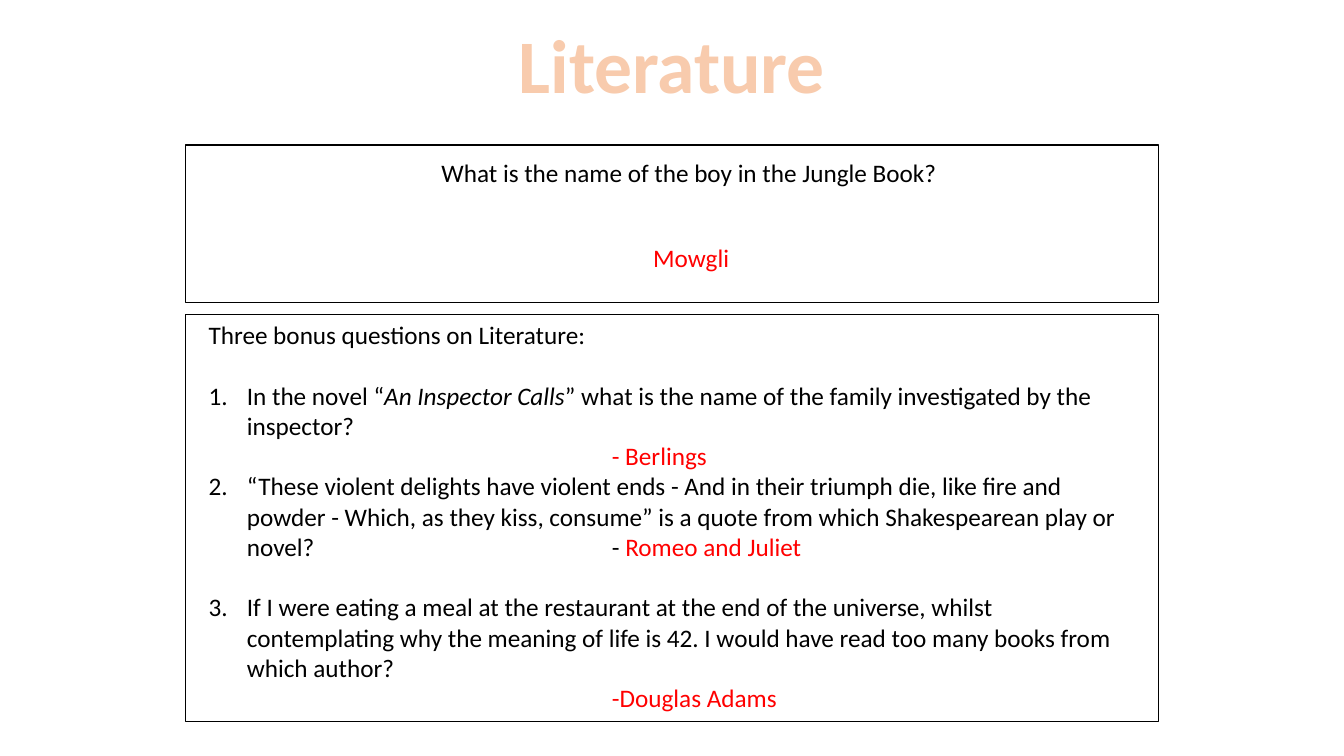
from lxml import etree
from pptx import Presentation
from pptx.dml.color import RGBColor
from pptx.enum.shapes import MSO_SHAPE
from pptx.enum.text import MSO_ANCHOR, MSO_AUTO_SIZE, PP_ALIGN
from pptx.oxml.ns import qn
from pptx.util import Inches, Pt

BLACK, RED, PEACH, ORANGE = "000000", "FF0000", "F8CBAD", "ED7D31"
LINE_GAP = 21.6


def color(value):
    return RGBColor.from_string(value)


class QuizSlide:
    font_name = "Calibri"
    text_size = 18

    def __init__(self, presentation):
        self.slide = presentation.slides.add_slide(presentation.slide_layouts[5])

    def style(self, font, fill, size=None, bold=False):
        font.name = self.font_name
        font.size = Pt(size or self.text_size)
        font.bold = bold
        font.color.rgb = color(fill)

    def title(self, text, left, top, width, height):
        shape = self.slide.shapes.title
        shape.left, shape.top = Inches(left), Inches(top)
        shape.width, shape.height = Inches(width), Inches(height)
        frame = shape.text_frame
        frame.text = text
        frame.word_wrap = False
        frame.vertical_anchor = MSO_ANCHOR.TOP
        frame.auto_size = MSO_AUTO_SIZE.SHAPE_TO_FIT_TEXT
        paragraph = frame.paragraphs[0]
        paragraph.alignment = PP_ALIGN.CENTER
        run = paragraph.runs[0]
        self.style(run.font, PEACH, 54, True)
        outline = etree.Element(qn("a:ln"), w=str(Pt(1.75)))
        fill = etree.SubElement(outline, qn("a:solidFill"))
        etree.SubElement(fill, qn("a:srgbClr"), val=ORANGE)
        run._r.get_or_add_rPr().insert(0, outline)

    def text_box(self, left, top, width, height, wrap=True):
        box = self.slide.shapes.add_textbox(
            Inches(left), Inches(top), Inches(width), Inches(height))
        box.text_frame.word_wrap = wrap
        box.text_frame.auto_size = MSO_AUTO_SIZE.SHAPE_TO_FIT_TEXT
        return box.text_frame

    def line(self, text, fill, *position):
        paragraph = self.text_box(*position, wrap=False).paragraphs[0]
        self.add_runs(paragraph, [(text, fill, False)])

    def add_runs(self, paragraph, runs):
        for text, fill, italic in runs:
            run = paragraph.add_run()
            run.text = text
            if len(runs) > 1:
                self.style(run.font, fill)
                run.font.italic = italic
            else:
                self.style(paragraph.font, fill)

    def indent(self, paragraph, margin, first=0, number=None, tab=None):
        properties = paragraph._p.get_or_add_pPr()
        properties.set("marL", str(Inches(margin)))
        properties.set("indent", str(Inches(first)))
        if number:
            etree.SubElement(properties, qn("a:buFont"), typeface="+mj-lt")
            etree.SubElement(properties, qn("a:buAutoNum"),
                             type="arabicPeriod", startAt=str(number))
        if tab:
            stops = etree.SubElement(properties, qn("a:tabLst"))
            etree.SubElement(stops, qn("a:tab"), pos=str(Inches(tab)), algn="l")

    def question(self, frame, number, runs, gap=0, tab=None):
        paragraph = frame.add_paragraph()
        paragraph.space_before = Pt(gap)
        self.indent(paragraph, 0.38, -0.38, number, tab)
        self.add_runs(paragraph, runs)

    def answer(self, frame, text):
        paragraph = frame.add_paragraph()
        self.indent(paragraph, 4)
        self.add_runs(paragraph, [(text, RED, False)])

    def border(self, left, top, width, height):
        shape = self.slide.shapes.add_shape(
            MSO_SHAPE.RECTANGLE,
            Inches(left), Inches(top), Inches(width), Inches(height))
        shape.shadow.inherit = False
        shape.fill.background()
        shape.line.color.rgb = color(BLACK)
        shape.line.width = Pt(1)


def main():
    presentation = Presentation()
    presentation.slide_width, presentation.slide_height = Inches(13.33), Inches(7.5)
    quiz = QuizSlide(presentation)

    quiz.title("Literature", 5.03, 0.13, 3.27, 1.01)
    quiz.line("What is the name of the boy in the Jungle Book?", BLACK,
              4.28, 1.51, 5.18, 0.4)
    quiz.line("Mowgli", RED, 6.38, 2.36, 0.96, 0.4)

    bonus = quiz.text_box(1.97, 3.12, 9.39, 4.04)
    quiz.add_runs(bonus.paragraphs[0],
                  [("Three bonus questions on Literature:", BLACK, False)])
    quiz.question(bonus, 1, [
        ("In the novel “", BLACK, False),
        ("An Inspector Calls", BLACK, True),
        ("” what is the name of the family investigated by the inspector?",
         BLACK, False)], gap=LINE_GAP)
    quiz.answer(bonus, "- Berlings")
    quiz.question(bonus, 2, [
        ("“These violent delights have violent ends - And in their triumph die, "
         "like fire and powder - Which, as they kiss, consume” is a quote from "
         "which Shakespearean play or novel?\t- ", BLACK, False),
        ("Romeo and Juliet", RED, False)], tab=4)
    quiz.question(bonus, 3, [
        ("If I were eating a meal at the restaurant at the end of the universe, "
         "whilst contemplating why the meaning of life is 42. I would have read "
         "too many books from which author?", BLACK, False)], gap=LINE_GAP)
    quiz.answer(bonus, "-Douglas Adams")

    for top, height in ((1.44, 1.56), (3.12, 4.04)):
        quiz.border(1.84, top, 9.65, height)

    presentation.save("out.pptx")


if __name__ == "__main__":
    main()
